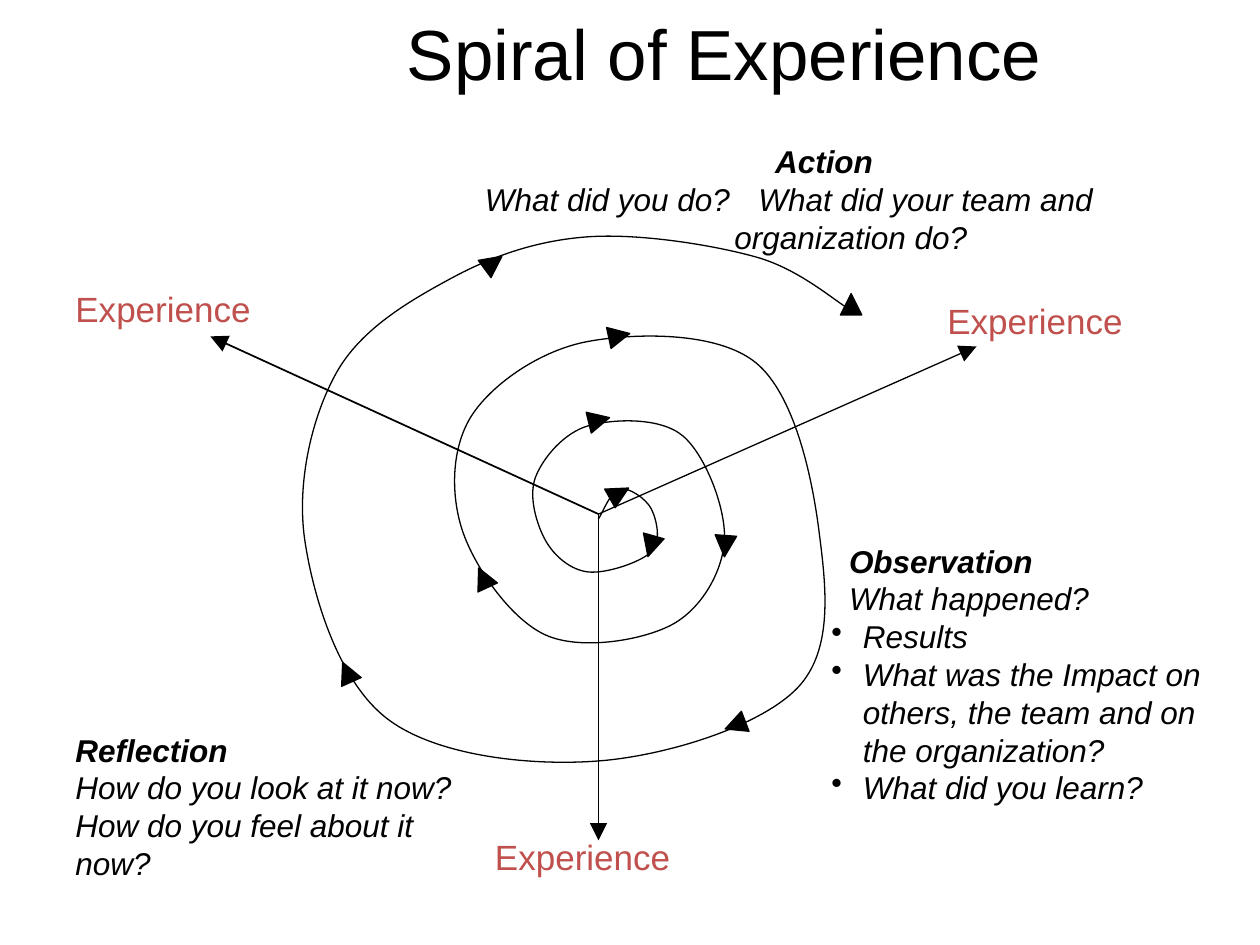
from lxml import etree
from pptx import Presentation
from pptx import util as u
from pptx.dml.color import RGBColor
from pptx.enum import shapes, text
from pptx.oxml.ns import qn

BLACK = RGBColor(0x00, 0x00, 0x00)
RED = RGBColor(0xC0, 0x50, 0x4D)
LEFT, CENTER = text.PP_ALIGN.LEFT, text.PP_ALIGN.CENTER

deck = Presentation()
deck.slide_width, deck.slide_height = u.Inches(10), u.Inches(7.5)
page = deck.slides.add_slide(deck.slide_layouts[6])


def add_text(place, lines, size=18, color=BLACK, align=LEFT, anchor=text.MSO_ANCHOR.TOP):
    box = page.shapes.add_textbox(*map(u.Inches, place))
    frame = box.text_frame
    frame.word_wrap = True
    frame.vertical_anchor = anchor
    paras = []
    for index, (words, style) in enumerate(lines):
        para = frame.paragraphs[0] if index == 0 else frame.add_paragraph()
        para.alignment = align
        span = para.add_run()
        span.text = words
        font = {"name": "Arial", "size": u.Pt(size), **style}
        for name, value in font.items():
            setattr(span.font, name, value)
        span.font.color.rgb = color
        paras.append(para)
    return paras


def set_indent(para, margin, first=0):
    props = para._p.get_or_add_pPr()
    props.set("marL", str(u.Inches(margin)))
    props.set("indent", str(u.Inches(first)))
    return props


HEADING = {"bold": True, "italic": True}
QUESTION = {"bold": False, "italic": True}

add_text((1.5, 0, 8.5, 0.83), [("Spiral of Experience", {})], size=40.5,
         align=CENTER, anchor=text.MSO_ANCHOR.MIDDLE)

knots = [
    (4.75, 4.12), (4.92, 3.88), (5.17, 4.04), (5.17, 4.38), (4.67, 4.54), (4.33, 4.29),
    (4.25, 3.79), (4.67, 3.38), (5.42, 3.46), (5.75, 4.29), (5.33, 4.96), (4.33, 5.04),
    (3.67, 4.21), (3.75, 3.29), (4.67, 2.71), (6, 2.88), (6.5, 4.21), (6.33, 5.46),
    (4.75, 6.04), (3.08, 5.71), (2.42, 4.29), (2.67, 2.96), (3.58, 2.21), (4.67, 1.88),
    (6, 2.04), (6.75, 2.46),
]
padded = [knots[0], *knots, knots[-1]]
curve = []
for before, start, end, after in zip(padded, padded[1:], padded[2:], padded[3:]):
    curve.append([s + (e - b) / 6 for b, s, e in zip(before, start, end)])
    curve.append([e - (a - s) / 6 for s, e, a in zip(start, end, after)])
    curve.append(end)

builder = page.shapes.build_freeform(*map(u.Inches, knots[0]), scale=1.0)
builder.add_line_segments([(u.Inches(x), u.Inches(y)) for x, y in curve], close=False)
spiral = builder.convert_to_shape()
spiral.shadow.inherit = False
spiral.fill.background()
spiral.line.color.rgb = BLACK
spiral.line.width = u.Pt(0.75)
outline = next(spiral._element.iter(qn("a:path")))
steps = outline.findall(qn("a:lnTo"))
for index in range(0, len(steps), 3):
    bezier = etree.SubElement(outline, qn("a:cubicBezTo"))
    for step in steps[index:index + 3]:
        bezier.append(step[0])
        outline.remove(step)

for x, y, width in [(7.75, 2.75, 0.75), (1.67, 2.67, 1), (4.75, 6.67, 0.75)]:
    arrow = page.shapes.add_connector(shapes.MSO_CONNECTOR.STRAIGHT,
                                      *map(u.Inches, (4.75, 4.08, x, y)))
    arrow.line.color.rgb = BLACK
    arrow.line.width = u.Pt(width)
    etree.SubElement(arrow.line._get_or_add_ln(), qn("a:tailEnd"),
                     type="triangle", w="lg", len="lg")
    etree.SubElement(arrow._element.spPr, qn("a:effectLst"))

arrowheads = [
    (6.67, 2.33, 0), (3.83, 2, 53.6), (3.75, 4.5, 335.1), (2.67, 5.25, 335.9),
    (5.75, 5.67, 249), (5.67, 4.25, 184.1), (5.08, 4.25, 195.7), (4.67, 3.25, 76.4),
    (4.83, 2.58, 78), (4.83, 3.83, 60.8),
]
for x, y, angle in arrowheads:
    head = page.shapes.add_shape(shapes.MSO_SHAPE.ISOSCELES_TRIANGLE,
                                 *map(u.Inches, (x, y, 0.17, 0.17)))
    head.rotation = angle
    head.shadow.inherit = False
    head.fill.solid()
    head.fill.fore_color.rgb = BLACK
    head.line.color.rgb = BLACK
    head.line.width = u.Pt(0.75)

action, did, organization = add_text((3.75, 1.08, 5.58, 1), [
    ("Action", HEADING),
    ("What did you do?\tWhat did your team and", QUESTION),
    ("organization do?", QUESTION),
])
action.alignment = CENTER
stops = etree.SubElement(did._p.get_or_add_pPr(), qn("a:tabLst"))
etree.SubElement(stops, qn("a:tab"), pos=str(u.Inches(2.17)), algn="l")
set_indent(organization, 1.98)

observation = add_text((6.5, 4.25, 3.17, 2.5), [
    ("Observation", HEADING),
    ("What happened?", QUESTION),
    ("Results", QUESTION),
    ("What was the Impact on others, the team and on the organization?", QUESTION),
    ("What did you learn?", QUESTION),
])
for para in observation[:2]:
    set_indent(para, 0.14)
for para in observation[2:]:
    etree.SubElement(set_indent(para, 0.25, -0.25), qn("a:buChar"), char="•")

add_text((0.5, 5.75, 3.5, 1.3), [
    ("Reflection", HEADING),
    ("How do you look at it now?", QUESTION),
    ("How do you feel about it now?", QUESTION),
])

for x, y in [(0.5, 2.23), (7.42, 2.33), (3.83, 6.58)]:
    add_text((x, y, 2, 0.43), [("Experience", {})], size=20, color=RED)

deck.save("out.pptx")
